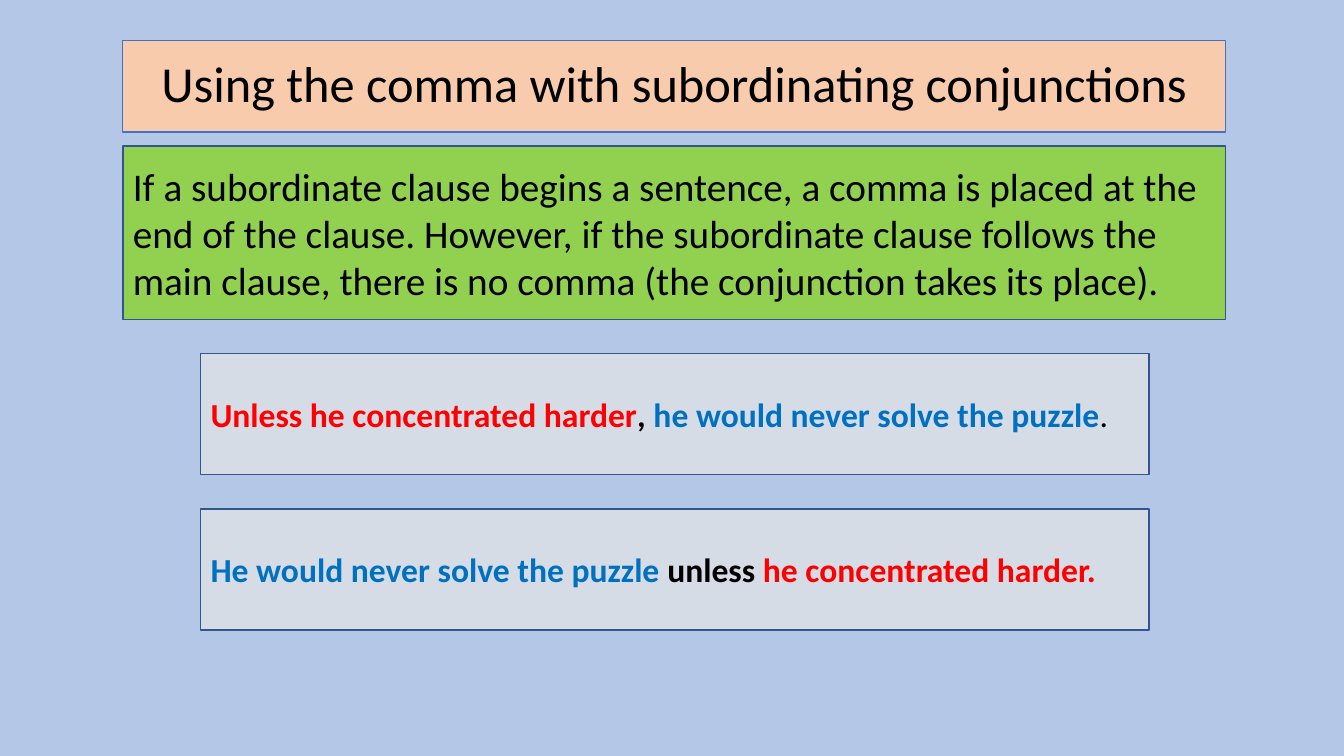
import pptx
import pptx.util
import pptx.dml.color
import pptx.enum.shapes
import pptx.enum.text
from dataclasses import dataclass

Pt = pptx.util.Pt
ALIGN = pptx.enum.text.PP_ALIGN


@dataclass(frozen=True)
class Theme:
    font: str = "Calibri"
    background: str = "B4C7E7"
    title_fill: str = "F8CBAD"
    title_line: str = "4472C4"
    rule_fill: str = "92D050"
    example_fill: str = "D6DCE5"
    box_line: str = "325491"
    text: str = "000000"
    subordinate: str = "FF0000"
    main: str = "0070C0"
    title_size: int = 36
    rule_size: int = 28
    example_size: int = 24


theme = Theme()

# Content: each example is a list of (text, colour, bold)
TITLE = "Using the comma with subordinating conjunctions"
RULE = ("If a subordinate clause begins a sentence, a comma is placed at the "
        "end of the clause. However, if the subordinate clause follows the "
        "main clause, there is no comma (the conjunction takes its place).")
EXAMPLES = [
    [("Unless he concentrated harder", theme.subordinate, True),
     (", ", theme.text, True),
     ("he would never solve the puzzle", theme.main, True),
     (".", theme.text, False)],
    [("He would never solve the puzzle", theme.main, True),
     (" unless ", theme.text, True),
     ("he concentrated harder.", theme.subordinate, True)],
]

# Layout in points
SLIDE_W, SLIDE_H = 960, 540
HEAD_LEFT, HEAD_W = 87.84, 787.68
TITLE_BOX = (HEAD_LEFT, 28.8, HEAD_W, 65.52)
RULE_BOX = (HEAD_LEFT, 104.4, HEAD_W, 123.84)
EXAMPLE_LEFT, EXAMPLE_TOP, EXAMPLE_W, EXAMPLE_H = 143.28, 252.72, 677.52, 86.4
EXAMPLE_STEP = EXAMPLE_H + 24.48


def rgb(value):
    return pptx.dml.color.RGBColor.from_string(value)


def add_text(p, text, *, size, color=theme.text, bold=False):
    r = p.add_run()
    r.text = text
    r.font.name = theme.font
    r.font.size = Pt(size)
    r.font.bold = bold
    r.font.color.rgb = rgb(color)


def style_box(sp, box, fill, line, line_width, align):
    """Place and colour a shape; return its first paragraph."""
    sp.left, sp.top, sp.width, sp.height = (Pt(v) for v in box)
    sp.fill.solid()
    sp.fill.fore_color.rgb = rgb(fill)
    sp.line.color.rgb = rgb(line)
    sp.line.width = Pt(line_width)
    tf = sp.text_frame
    tf.word_wrap = True
    tf.auto_size = pptx.enum.text.MSO_AUTO_SIZE.NONE
    tf.vertical_anchor = pptx.enum.text.MSO_ANCHOR.MIDDLE
    p = tf.paragraphs[0]
    p.alignment = align
    return p


def add_box(s, box, fill):
    sp = s.shapes.add_shape(pptx.enum.shapes.MSO_SHAPE.RECTANGLE,
                            *(Pt(v) for v in box))
    sp.shadow.inherit = False
    return style_box(sp, box, fill, theme.box_line, 1, ALIGN.LEFT)


def main():
    prs = pptx.Presentation()
    prs.slide_width, prs.slide_height = Pt(SLIDE_W), Pt(SLIDE_H)
    s = prs.slides.add_slide(prs.slide_layouts[5])
    s.background.fill.solid()
    s.background.fill.fore_color.rgb = rgb(theme.background)

    # Title
    p = style_box(s.shapes.title, TITLE_BOX, theme.title_fill,
                  theme.title_line, 0.75, ALIGN.CENTER)
    p.line_spacing = 0.9
    add_text(p, TITLE, size=theme.title_size)

    # Rule
    p = add_box(s, RULE_BOX, theme.rule_fill)
    add_text(p, RULE, size=theme.rule_size)

    # Example sentences
    for i, parts in enumerate(EXAMPLES):
        top = EXAMPLE_TOP + i * EXAMPLE_STEP
        p = add_box(s, (EXAMPLE_LEFT, top, EXAMPLE_W, EXAMPLE_H),
                    theme.example_fill)
        for text, color, bold in parts:
            add_text(p, text, size=theme.example_size, color=color, bold=bold)

    prs.save("out.pptx")


if __name__ == "__main__":
    main()
